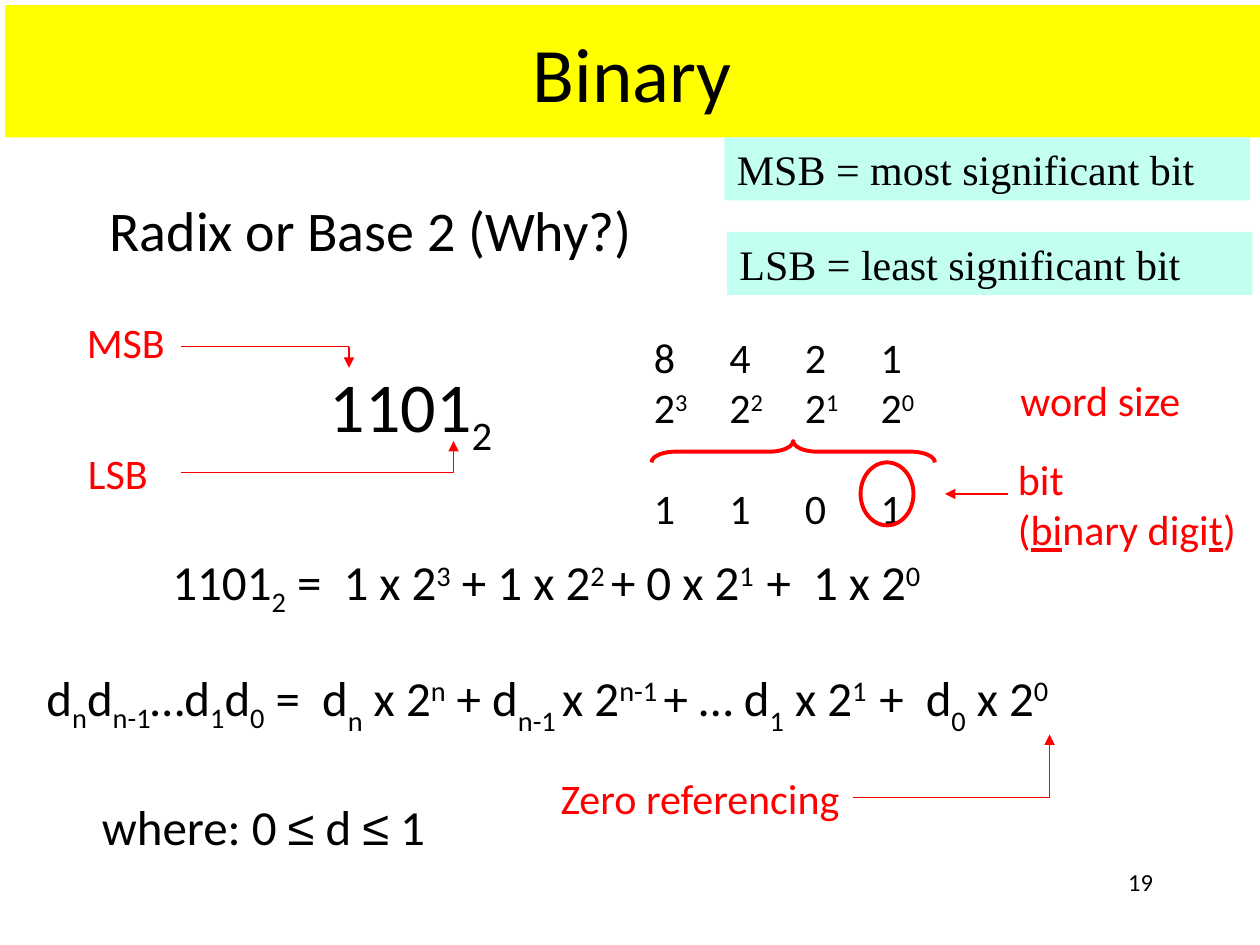
from itertools import pairwise
from lxml import etree
from pptx import Presentation
from pptx.dml.color import RGBColor
from pptx.enum.shapes import MSO_CONNECTOR, MSO_SHAPE
from pptx.enum.text import MSO_ANCHOR, PP_ALIGN
from pptx.oxml.ns import qn
from pptx.util import Inches, Pt

LINE = MSO_CONNECTOR.STRAIGHT
RECT, OVAL, BRACE = MSO_SHAPE.RECTANGLE, MSO_SHAPE.OVAL, MSO_SHAPE.LEFT_BRACE
MIDDLE = MSO_ANCHOR.MIDDLE
LEFT, CENTER, RIGHT = PP_ALIGN.LEFT, PP_ALIGN.CENTER, PP_ALIGN.RIGHT
COLORS = {"ink": "000000", "red": "FF0000", "yellow": "FFFF00", "mint": "C2FFF0"}
BASES = {"_": "-25000", "~": "-30000", "^": "30000"}
COLS, ROWS = 100, 75


def grid(*cells):
    """Turn grid cells, ten to the inch, into lengths."""
    return [Inches(cell / 10) for cell in cells]


def color(name):
    """Look up a colour by name."""
    return RGBColor.from_string(COLORS[name])


def write(para, text, size, ink="ink", face="Calibri", align=LEFT):
    """Write bar-separated runs; a leading mark sets how each looks."""
    font = para.font
    font.size, font.name, font.color.rgb = Pt(size), face, color(ink)
    para.alignment = align
    for part in text.split("|"):
        mark = part[0] if part[0] in "_~^*@" else ""
        run = para.add_run()
        run.text = part[len(mark):]
        if mark in BASES:
            run._r.get_or_add_rPr().set("baseline", BASES[mark])
        elif mark == "*":
            run.font.underline = True
        elif mark == "@":
            run.font.name = "Arial"


def label(slide, box, lines, size, ink="ink", align=LEFT):
    """Place a text box with one paragraph a line."""
    shape = slide.shapes.add_textbox(*grid(*box))
    frame = shape.text_frame
    frame.word_wrap = True
    for i, line in enumerate(lines):
        para = frame.add_paragraph() if i else frame.paragraphs[0]
        write(para, line, size, ink, align=align)
    return shape


def panel(slide, box, text, fill, size, face, align):
    """Place a filled rectangle with text."""
    shape = slide.shapes.add_shape(RECT, *grid(*box))
    shape.shadow.inherit = False
    shape.fill.solid()
    shape.fill.fore_color.rgb = color(fill)
    shape.line.fill.background()
    shape.text_frame.vertical_anchor = MIDDLE
    write(shape.text_frame.paragraphs[0], text, size, face=face, align=align)


def outline(slide, kind, box):
    """Place an unfilled shape with a thick red line."""
    shape = slide.shapes.add_shape(kind, *grid(*box))
    shape.shadow.inherit = False
    shape.fill.background()
    shape.line.color.rgb, shape.line.width = color("red"), Pt(2.25)
    return shape


def arrow(slide, points, source=None):
    """Draw straight red lines through the points, with a head at the end."""
    lines = []
    for start, end in pairwise(points):
        line = slide.shapes.add_connector(LINE, *grid(*start, *end))
        line.line.color.rgb, line.line.width = color("red"), Pt(0.75)
        etree.SubElement(line._element.spPr, qn("a:effectLst"))
        lines.append(line)
    ln = lines[-1].line._get_or_add_ln()
    etree.SubElement(ln, qn("a:tailEnd"), type="triangle")
    if source is not None:
        lines[0].begin_connect(source, 3)


def number(slide, x, y):
    """Show the binary number with its end bits pointed out."""
    label(slide, (x + 19.3, y + 3.7, 15.3, 7.7), ["1101|_2"], 40)
    label(slide, (x, y, 8.5, 5.1), ["MSB"], 24, "red")
    label(slide, (x + 0.1, y + 10.4, 7, 5.1), ["LSB"], 24, "red")
    for row, col, tip in ((2.9, 21.8, 4.6), (12.9, 30.1, 10.4)):
        arrow(slide, [(x + 8.5, y + row), (x + col, y + row), (x + col, y + tip)])


def bits(slide, x, y):
    """Show place values above the bits, with the word and bit marked."""
    rows = ["8\t4\t2\t1", "2|^3|\t2|^2|\t2|^1|\t2|^0", "1\t1\t0\t1"]
    shape = label(slide, (x, y, 23.2, 15.8), rows, 24)
    paras = shape.text_frame.paragraphs
    paras[-1].space_before = Pt(29)
    for para in paras:
        tabs = etree.SubElement(para._p.get_or_add_pPr(), qn("a:tabLst"))
        for i in range(1, 4):
            etree.SubElement(tabs, qn("a:tab"), pos=str(Inches(0.6 * i)), algn="l")
        props = para._p.pPr
        props.insert(props.index(props.find(qn("a:defRPr"))), tabs)
    brace = outline(slide, BRACE, (x + 11.2, y - 1.2, 1.7, 22.5))
    brace.adjustments[0] = 1.125
    brace.rotation = 90
    outline(slide, OVAL, (x + 17.4, y + 10.9, 4.2, 5))
    label(slide, (x + 29.1, y + 3.4, 15.2, 5), ["word size"], 24, "red")
    label(slide, (x + 28.9, y + 9.7, 19.8, 9.1),
          ["bit", "(|*bi|nary digi|*t|)"], 24, "red")
    arrow(slide, [(x + 29.1, y + 13.4), (x + 24.1, y + 13.4)])


def formulas(slide, x, y):
    """Show the worked sum, the general rule and the zero reference."""
    label(slide, (x + 10, y, 63.1, 5.7),
          ["1101|_2| =  1 x 2|^3| + 1 x 2|^2 |+ 0 x 2|^1  |+  1 x 2|^0"], 28)
    rule = ("d|_n|d|_n-1|…d|_1|d|_0| =  d|~n| x 2|^n| + d|~n-1 |x 2|^n-1 "
            "|+ … d|~1| x 2|^1  |+  d|~0| x 2|^0")
    shape = label(slide, (x, y + 9.2, 85.9, 16.7),
                  [rule, "where: 0 |@≤| d |@≤| 1"], 28)
    para = shape.text_frame.paragraphs[1]
    para.space_before = Pt(34)
    para._p.get_or_add_pPr().set("marL", str(Inches(0.44)))
    note = label(slide, (x + 40.8, y + 17.5, 24.2, 5), ["Zero referencing"], 24, "red")
    arrow(slide, [(x + 65, y + 20), (x + 80.6, y + 20), (x + 80.6, y + 15)], note)


def main():
    """Build the slide and save it."""
    deck = Presentation()
    deck.slide_width, deck.slide_height = grid(COLS, ROWS)
    slide = deck.slides.add_slide(deck.slide_layouts[6])
    panel(slide, (0.4, 0.4, 99.6, 10.5), "Binary", "yellow", 44, "Calibri", CENTER)
    label(slide, (7.7, 15, 43.9, 10.4), ["Radix or Base 2 (Why?)"], 32)
    number(slide, 5.9, 24.6)
    bits(slide, 50.9, 25.8)
    formulas(slide, 2.7, 43.3)
    for col, row, text in ((57.5, 10.9, "MSB = most significant bit"),
                           (57.7, 18.4, "LSB = least significant bit")):
        panel(slide, (col, row, 41.7, 5), text, "mint", 24, "Times New Roman", LEFT)
    label(slide, (71.7, 68.3, 20.8, 5), ["19"], 14, align=RIGHT)
    deck.save("out.pptx")


if __name__ == "__main__":
    main()
